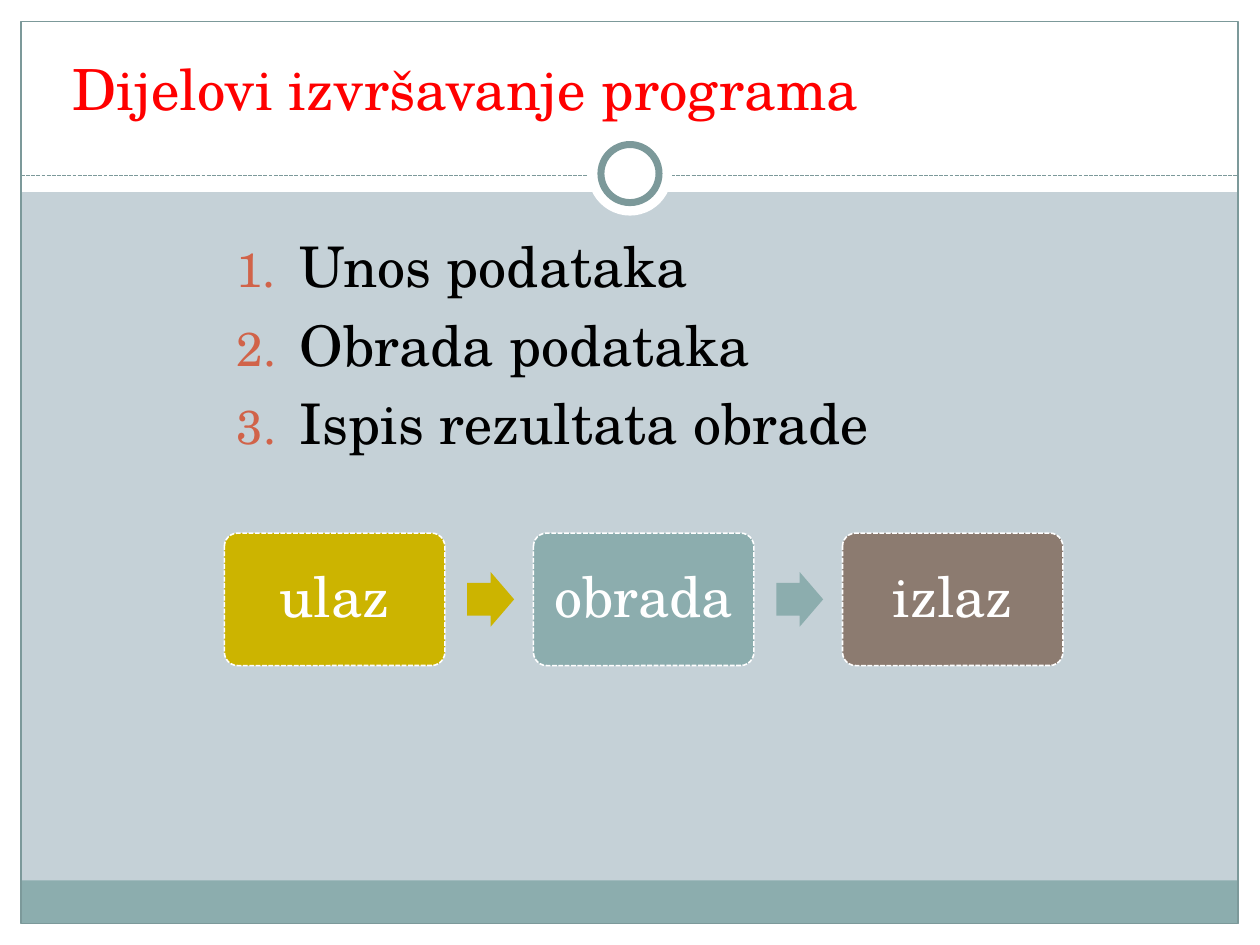
from lxml import etree
from pptx import Presentation
from pptx.dml.color import RGBColor
from pptx.enum import dml, shapes, text
from pptx.oxml import ns
from pptx.util import Pt

FONT = "TeX Gyre Schola"
WHITE, TEAL, DARK_TEAL = "FFFFFF", "8CADAE", "7C999A"
color = RGBColor.from_string
Kind = shapes.MSO_SHAPE

deck = Presentation()
deck.slide_width, deck.slide_height = Pt(720), Pt(540)
page = deck.slides.add_slide(deck.slide_layouts[6])
page.background.fill.solid()
page.background.fill.fore_color.rgb = color("C5D1D7")


def draw(kind, left, top, width, height, fill=None, line=None, weight=0.75,
         dash=None, adjust=()):
    shape = page.shapes.add_shape(kind, Pt(left), Pt(top), Pt(width), Pt(height))
    shape.shadow.inherit = False
    for index, value in enumerate(adjust):
        shape.adjustments[index] = value
    if fill:
        shape.fill.solid()
        shape.fill.fore_color.rgb = color(fill)
    else:
        shape.fill.background()
    if line:
        shape.line.color.rgb = color(line)
        shape.line.width = Pt(weight)
        shape.line.dash_style = dash
    else:
        shape.line.fill.background()
    return shape


def write(box, lines, size=32, ink="000000", align=text.PP_ALIGN.LEFT,
          anchor=text.MSO_ANCHOR.TOP, wrap=True, before=0, spacing=None,
          number_color=None):
    frame = box.text_frame
    frame.word_wrap = wrap
    frame.vertical_anchor = anchor
    for index, line in enumerate(lines):
        para = frame.add_paragraph() if index else frame.paragraphs[0]
        para.alignment = align
        para.space_before = Pt(before)
        para.line_spacing = spacing
        span = para.add_run()
        span.text = line
        span.font.name, span.font.size = FONT, Pt(size)
        span.font.color.rgb = color(ink)
        if number_color:
            props = para._p.get_or_add_pPr()
            props.set("marL", str(Pt(36)))
            props.set("indent", str(-Pt(36)))
            tint = etree.SubElement(props, ns.qn("a:buClr"))
            etree.SubElement(tint, ns.qn("a:srgbClr"), val=number_color)
            etree.SubElement(props, ns.qn("a:buSzPct"), val="85000")
            etree.SubElement(props, ns.qn("a:buFont"), typeface=FONT)
            etree.SubElement(props, ns.qn("a:buAutoNum"), type="arabicPeriod")


# White margins: bottom, header, left, right
for place in [(0, 528, 720, 12), (0, 0, 720, 109.7),
              (0, 0, 12, 540), (708, 0, 12, 540)]:
    draw(Kind.RECTANGLE, *place, fill=WHITE)

# Footer band and page frame
draw(Kind.RECTANGLE, 11.75, 503, 695.5, 24.4, fill=TEAL)
draw(Kind.RECTANGLE, 12, 12.2, 695.5, 515.5, line=DARK_TEAL)

# Dashed rule under the header
rule = page.shapes.add_connector(shapes.MSO_CONNECTOR.STRAIGHT,
                                 Pt(12), Pt(100.5), Pt(707.5), Pt(100.5))
rule.line.color.rgb = color(DARK_TEAL)
rule.line.width = Pt(0.75)
rule.line.dash_style = dml.MSO_LINE.SQUARE_DOT
etree.SubElement(rule._element.spPr, ns.qn("a:effectLst"))

# Ring in the middle of the rule
draw(Kind.OVAL, 336, 75.2, 48, 48, fill=WHITE)
draw(Kind.OVAL, 343.4, 82.6, 33.2, 33.2, fill=WHITE, line=DARK_TEAL, weight=4)

# Title
title = page.shapes.add_textbox(Pt(25.9), Pt(17.3), Pt(480), Pt(56))
write(title, ["Dijelovi izvršavanje programa"], size=32.4, ink="FF0000",
      align=text.PP_ALIGN.CENTER, anchor=text.MSO_ANCHOR.BOTTOM)

# Numbered list
steps = page.shapes.add_textbox(Pt(128.2), Pt(128.9), Pt(527.8), Pt(331))
write(steps, ["Unos podataka", "Obrada podataka", "Ispis rezultata obrade"],
      before=6.4, number_color="D16349")

# Process: boxes at an equal pitch, with an arrow after all but the last
stages = [("ulaz", "CCB400"), ("obrada", TEAL), ("izlaz", "8C7B70")]
for index, (label, fill) in enumerate(stages):
    left = 128.2 + 176.6 * index
    stage = draw(Kind.ROUNDED_RECTANGLE, left, 304.6, 126, 75.7, fill=fill,
                 line=WHITE, weight=0.9, dash=dml.MSO_LINE.SQUARE_DOT,
                 adjust=[0.1])
    write(stage, [label], ink=WHITE, align=text.PP_ALIGN.CENTER,
          anchor=text.MSO_ANCHOR.MIDDLE, wrap=False, spacing=0.9)
    if index < len(stages) - 1:
        draw(Kind.RIGHT_ARROW, left + 138.8, 326.9, 26.8, 31.2, fill=fill,
             adjust=[0.6, 0.5])

deck.save("out.pptx")
